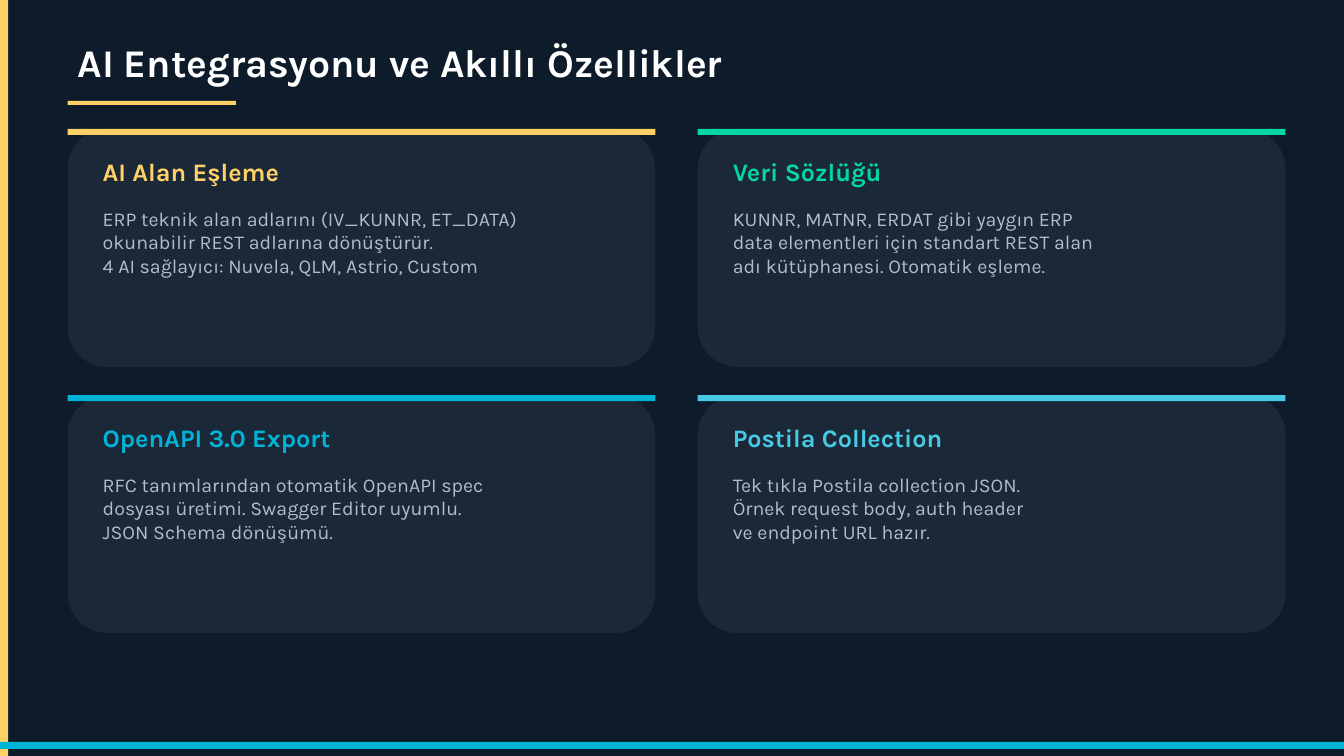
from dataclasses import dataclass

from pptx import Presentation
from pptx.dml.color import RGBColor
from pptx.enum.shapes import MSO_SHAPE
from pptx.enum.text import MSO_ANCHOR, MSO_AUTO_SIZE, PP_ALIGN
from pptx.util import Inches, Pt

# Content
HEADING = "AI Entegrasyonu ve Akıllı Özellikler"
CARDS = [
    ("AI Alan Eşleme", "yellow", [
        "ERP teknik alan adlarını (IV_KUNNR, ET_DATA)",
        "okunabilir REST adlarına dönüştürür.",
        "4 AI sağlayıcı: Nuvela, QLM, Astrio, Custom",
    ]),
    ("Veri Sözlüğü", "green", [
        "KUNNR, MATNR, ERDAT gibi yaygın ERP",
        "data elementleri için standart REST alan",
        "adı kütüphanesi. Otomatik eşleme.",
    ]),
    ("OpenAPI 3.0 Export", "blue", [
        "RFC tanımlarından otomatik OpenAPI spec",
        "dosyası üretimi. Swagger Editor uyumlu.",
        "JSON Schema dönüşümü.",
    ]),
    ("Postila Collection", "sky", [
        "Tek tıkla Postila collection JSON.",
        "Örnek request body, auth header",
        "ve endpoint URL hazır.",
    ]),
]


@dataclass(frozen=True)
class Theme:
    font: str = "Karla"
    background: str = "0D1B2A"
    card: str = "1B2838"
    white: str = "FFFFFF"
    grey: str = "B0BEC5"
    yellow: str = "FFD166"
    green: str = "06D6A0"
    blue: str = "00B4D8"
    sky: str = "48CAE4"
    heading_size: int = 28
    card_title_size: int = 18
    body_size: int = 14


THEME = Theme()

# Layout in inches
SLIDE_W, SLIDE_H = 13.33, 7.5
MARGIN, GRID_TOP = 0.67, 1.28
CARD_W, CARD_H = 5.83, 2.36
GAP_X, GAP_Y = 0.42, 0.28
COLUMNS, PADDING = 2, 0.25


def add_block(slide, box, color, kind=MSO_SHAPE.RECTANGLE):
    block = slide.shapes.add_shape(kind, *map(Inches, box))
    block.shadow.inherit = False
    block.fill.solid()
    block.fill.fore_color.rgb = RGBColor.from_string(color)
    block.line.fill.background()


def write(frame, lines, size, color, bold=False):
    frame.word_wrap = True
    frame.auto_size = MSO_AUTO_SIZE.NONE
    frame.vertical_anchor = MSO_ANCHOR.TOP
    paragraph = frame.paragraphs[0]
    paragraph.alignment = PP_ALIGN.LEFT
    for index, line in enumerate(lines):
        if index:
            paragraph.add_line_break()
        run = paragraph.add_run()
        run.text = line
        run.font.name = THEME.font
        run.font.size = Pt(size)
        run.font.bold = bold
        run.font.color.rgb = RGBColor.from_string(color)


def add_text(slide, box, lines, size, color, bold=False):
    text_box = slide.shapes.add_textbox(*map(Inches, box))
    write(text_box.text_frame, lines, size, color, bold)


def add_card(slide, left, top, title, accent, lines):
    add_block(slide, (left, top, CARD_W, CARD_H), THEME.card, MSO_SHAPE.ROUNDED_RECTANGLE)
    add_block(slide, (left, top, CARD_W, 0.06), accent)
    text_left, text_width = left + PADDING, CARD_W - 2 * PADDING
    add_text(slide, (text_left, top + 0.22, text_width, 0.39), [title],
             THEME.card_title_size, accent, bold=True)
    add_text(slide, (text_left, top + 0.72, text_width, 1.46), lines,
             THEME.body_size, THEME.grey)


def main():
    deck = Presentation()
    deck.slide_width, deck.slide_height = Inches(SLIDE_W), Inches(SLIDE_H)
    slide = deck.slides.add_slide(deck.slide_layouts[5])

    # Background and left edge
    slide.background.fill.solid()
    slide.background.fill.fore_color.rgb = RGBColor.from_string(THEME.background)
    add_block(slide, (0, 0, 0.08, SLIDE_H), THEME.yellow)

    # Heading and its underline
    heading = slide.shapes.title
    heading.left, heading.top = Inches(MARGIN), Inches(0.33)
    heading.width, heading.height = Inches(2 * CARD_W + GAP_X), Inches(0.58)
    write(heading.text_frame, [HEADING], THEME.heading_size, THEME.white, bold=True)
    add_block(slide, (MARGIN, 1, 1.67, 0.04), THEME.yellow)

    # Card grid
    for index, (title, accent, lines) in enumerate(CARDS):
        row, column = divmod(index, COLUMNS)
        left = MARGIN + column * (CARD_W + GAP_X)
        top = GRID_TOP + row * (CARD_H + GAP_Y)
        add_card(slide, left, top, title, getattr(THEME, accent), lines)

    # Bottom bar
    add_block(slide, (0, 7.36, SLIDE_W, 0.07), THEME.blue)
    deck.save("out.pptx")


if __name__ == "__main__":
    main()
